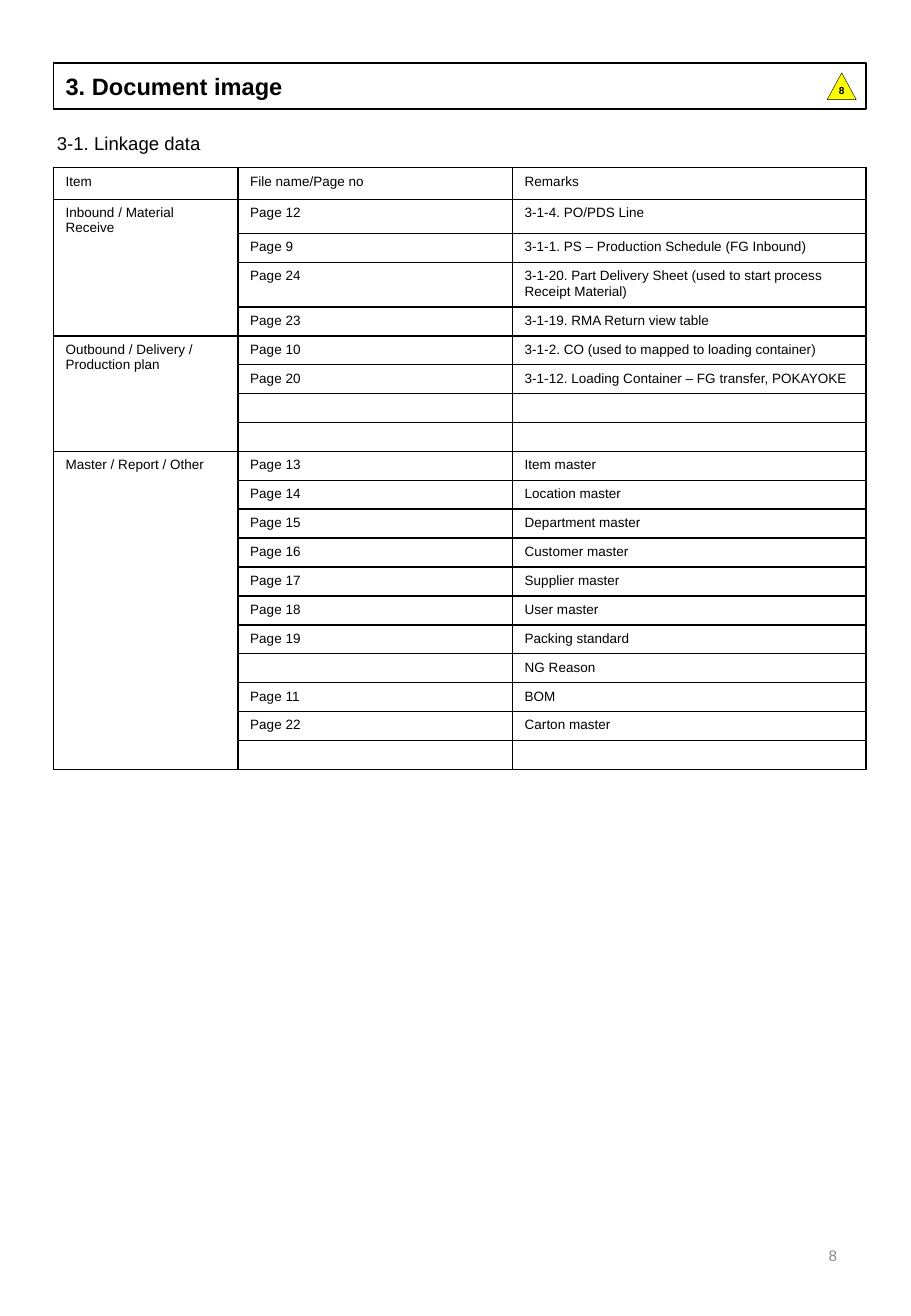
from dataclasses import dataclass

from lxml.etree import SubElement
from pptx import Presentation
from pptx.dml.color import RGBColor
from pptx.enum.shapes import MSO_SHAPE
from pptx.enum.text import MSO_ANCHOR, MSO_AUTO_SIZE, PP_ALIGN
from pptx.oxml.ns import qn
from pptx.util import Inches, Pt

BLACK = RGBColor(0x00, 0x00, 0x00)
GREY = RGBColor(0x8C, 0x8C, 0x8C)
YELLOW = RGBColor(0xFF, 0xFF, 0x00)

LEFT, WIDTH = 0.44, 6.69
TABLE_TOP, TABLE_HEIGHT = 1.38, 4.95
COLUMN_WIDTHS = (1.52, 2.26, 2.91)
LEADING_ROW_HEIGHTS = (0.26, 0.28, 0.24, 0.36)
HEADINGS = ("Item", "File name/Page no", "Remarks")


@dataclass(frozen=True)
class Entry:
    page: str = ""
    remark: str = ""


@dataclass(frozen=True)
class Section:
    item: str
    entries: tuple[Entry, ...]


SECTIONS = (
    Section("Inbound / Material Receive", (
        Entry("Page 12", "3-1-4. PO/PDS Line"),
        Entry("Page 9", "3-1-1. PS – Production Schedule (FG Inbound)"),
        Entry("Page 24", "3-1-20. Part Delivery Sheet (used to start process Receipt Material)"),
        Entry("Page 23", "3-1-19. RMA Return view table"),
    )),
    Section("Outbound / Delivery / Production plan", (
        Entry("Page 10", "3-1-2. CO (used to mapped to loading container)"),
        Entry("Page 20", "3-1-12. Loading Container – FG transfer, POKAYOKE"),
        Entry(),
        Entry(),
    )),
    Section("Master / Report / Other", (
        Entry("Page 13", "Item master"),
        Entry("Page 14", "Location master"),
        Entry("Page 15", "Department master"),
        Entry("Page 16", "Customer master"),
        Entry("Page 17", "Supplier master"),
        Entry("Page 18", "User master"),
        Entry("Page 19", "Packing standard"),
        Entry(remark="NG Reason"),
        Entry("Page 11", "BOM"),
        Entry("Page 22", "Carton master"),
        Entry(),
    )),
)


def write(frame, text: str, size: float, color: RGBColor = BLACK, bold: bool = False,
          align: PP_ALIGN = PP_ALIGN.LEFT) -> None:
    frame.text = text
    paragraph = frame.paragraphs[0]
    paragraph.alignment = align
    for run in paragraph.runs:
        run.font.name = "Arial"
        run.font.size = Pt(size)
        run.font.bold = bold
        run.font.color.rgb = color


def outline(shape, width: float) -> None:
    shape.line.color.rgb = BLACK
    shape.line.width = Pt(width)


def place(shape, left: float, top: float, width: float, height: float) -> None:
    shape.left, shape.top = Inches(left), Inches(top)
    shape.width, shape.height = Inches(width), Inches(height)


def add_label(slide, box: tuple[float, float, float, float]):
    frame = slide.shapes.add_textbox(*map(Inches, box)).text_frame
    frame.word_wrap = True
    return frame


def format_cell(cell) -> None:
    properties = cell._tc.get_or_add_tcPr()
    for side in ("lnL", "lnR", "lnT", "lnB"):
        border = SubElement(properties, qn(f"a:{side}"), w=str(Pt(1)))
        fill = SubElement(border, qn("a:solidFill"))
        SubElement(fill, qn("a:srgbClr"), val=str(BLACK))
    cell.fill.background()


def fill_cell(cell, text: str) -> None:
    write(cell.text_frame, text, 8)
    if not text:
        SubElement(cell.text_frame.paragraphs[0]._p, qn("a:endParaRPr"), sz="800")


def add_linkage_table(slide) -> None:
    row_count = 1 + sum(len(section.entries) for section in SECTIONS)
    table = slide.shapes.add_table(
        row_count, len(HEADINGS),
        *map(Inches, (LEFT, TABLE_TOP, WIDTH, TABLE_HEIGHT))).table
    table.first_row = False
    table.horz_banding = False
    for column, width in zip(table.columns, COLUMN_WIDTHS):
        column.width = Inches(width)
    even_height = ((TABLE_HEIGHT - sum(LEADING_ROW_HEIGHTS))
                   / (row_count - len(LEADING_ROW_HEIGHTS)))
    for index, row in enumerate(table.rows):
        leading = index < len(LEADING_ROW_HEIGHTS)
        row.height = Inches(LEADING_ROW_HEIGHTS[index] if leading else even_height)
    for cell in table.iter_cells():
        format_cell(cell)

    rows = [HEADINGS]
    for section in SECTIONS:
        first = len(rows)
        for position, entry in enumerate(section.entries):
            rows.append((section.item if position == 0 else "", entry.page, entry.remark))
        table.cell(first, 0).merge(table.cell(len(rows) - 1, 0))
    for row_index, texts in enumerate(rows):
        for column_index, text in enumerate(texts):
            fill_cell(table.cell(row_index, column_index), text)


def add_revision_mark(slide) -> None:
    revision = slide.shapes.add_shape(
        MSO_SHAPE.ISOSCELES_TRIANGLE, *map(Inches, (6.81, 0.6, 0.24, 0.22)))
    revision.shadow.inherit = False
    revision.fill.solid()
    revision.fill.fore_color.rgb = YELLOW
    outline(revision, 0.25)
    frame = revision.text_frame
    frame.margin_top, frame.margin_bottom = Inches(0), Inches(0.05)
    frame.vertical_anchor = MSO_ANCHOR.MIDDLE
    frame.word_wrap = False
    write(frame, "8", 6, bold=True, align=PP_ALIGN.CENTER)


def main() -> None:
    presentation = Presentation()
    presentation.slide_width = Inches(7.5)
    presentation.slide_height = Inches(10.83)
    slide = presentation.slides.add_slide(presentation.slide_layouts[5])

    heading = slide.shapes.title
    place(heading, LEFT, 0.52, WIDTH, 0.38)
    outline(heading, 1)
    heading.text_frame.auto_size = MSO_AUTO_SIZE.NONE
    heading.text_frame.vertical_anchor = MSO_ANCHOR.MIDDLE
    write(heading.text_frame, "3. Document image", 14, bold=True)

    subheading = add_label(slide, (0.37, 1.04, 4.59, 0.29))
    write(subheading, "3-1. Linkage data", 11)

    add_linkage_table(slide)
    add_revision_mark(slide)

    page_number = add_label(slide, (5.3, 10.04, 1.69, 0.58))
    page_number.vertical_anchor = MSO_ANCHOR.MIDDLE
    write(page_number, "8", 9, GREY, align=PP_ALIGN.RIGHT)

    presentation.save("out.pptx")


if __name__ == "__main__":
    main()
